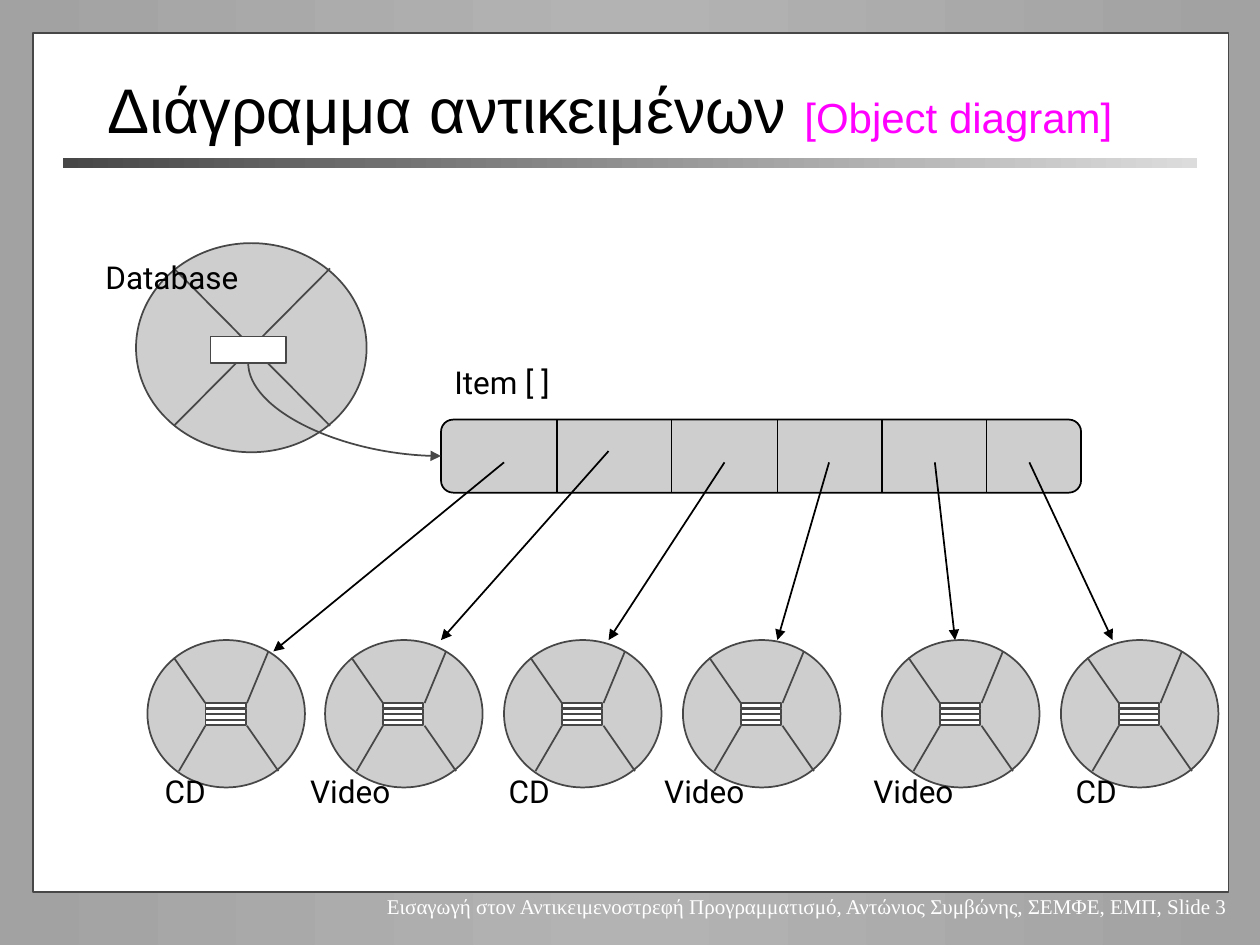
from copy import deepcopy
from dataclasses import dataclass

from lxml.etree import SubElement
from pptx import Presentation
from pptx.dml.color import RGBColor
from pptx.enum.shapes import MSO_CONNECTOR, MSO_SHAPE
from pptx.enum.text import MSO_ANCHOR, MSO_AUTO_SIZE, PP_ALIGN
from pptx.oxml.ns import qn
from pptx.util import Inches, Pt


@dataclass(frozen=True)
class Theme:
    black: str = "000000"
    white: str = "FFFFFF"
    dark: str = "474747"
    light: str = "CECECE"
    accent: str = "FF00FF"
    backdrop: tuple = ("A2A2A2", "B3B3B3", "A2A2A2")
    rule: tuple = ("474747", "DCDCDC")
    title_font: str = "Arial"
    label_font: str = "Roboto"
    footer_font: str = "Times New Roman"
    title_size: int = 36
    subtitle_size: int = 24
    label_size: int = 18
    footer_size: int = 12
    line_width: int = 1


class Deck:
    def __init__(self, theme):
        self.theme = theme
        self.prs = Presentation()
        self.prs.slide_width, self.prs.slide_height = Inches(10), Inches(7.5)
        self.s = self.prs.slides.add_slide(self.prs.slide_layouts[5])

    def gradient(self, owner, fill, colors):
        fill.gradient()
        fill.gradient_angle = 0
        stops = owner.element.find(".//" + qn("a:gsLst"))
        for _ in colors[2:]:
            stops.append(deepcopy(stops[-1]))
        for i, (stop, color) in enumerate(zip(fill.gradient_stops, colors)):
            stop.position = i / (len(colors) - 1)
            stop.color.rgb = RGBColor.from_string(color)

    def background(self):
        self.gradient(self.s, self.s.background.fill, self.theme.backdrop)

    def group(self):
        return self.s.shapes.add_group_shape()

    def shape(self, kind, box, fill, line=None, parent=None):
        sp = (parent or self.s).shapes.add_shape(kind, *map(Inches, box))
        sp.shadow.inherit = False
        if isinstance(fill, tuple):
            self.gradient(sp, sp.fill, fill)
        else:
            sp.fill.solid()
            sp.fill.fore_color.rgb = RGBColor.from_string(fill)
        if line:
            sp.line.color.rgb = RGBColor.from_string(line)
            sp.line.width = Pt(self.theme.line_width)
        else:
            sp.line.fill.background()
        return sp

    def line(self, start, end, color, parent=None, arrow=False, kind=MSO_CONNECTOR.STRAIGHT):
        c = (parent or self.s).shapes.add_connector(kind, *map(Inches, (*start, *end)))
        c.line.color.rgb = RGBColor.from_string(color)
        c.line.width = Pt(self.theme.line_width)
        props = c.element.spPr
        if arrow:
            SubElement(props.find(qn("a:ln")), qn("a:tailEnd"), type="triangle")
        SubElement(props, qn("a:effectLst"))
        return c

    def quarter_curve(self, start, end, color):
        mid_x, mid_y = (start[0] + end[0]) / 2, (start[1] + end[1]) / 2
        half_w, half_h = (end[1] - start[1]) / 2, (end[0] - start[0]) / 2
        c = self.line((mid_x + half_w, mid_y - half_h), (mid_x - half_w, mid_y + half_h),
                      color, arrow=True, kind=MSO_CONNECTOR.CURVE)
        props = c.element.spPr
        props.find(qn("a:prstGeom")).set("prst", "curvedConnector2")
        props.find(qn("a:xfrm")).set("rot", str(270 * 60000))

    def run(self, p, text, font, size, color):
        r = p.add_run()
        r.text = text
        r.font.name, r.font.size = font, Pt(size)
        r.font.color.rgb = RGBColor.from_string(color)

    def title(self, box, text, subtitle):
        t = self.theme
        sp = self.s.shapes.title
        sp.left, sp.top, sp.width, sp.height = map(Inches, box)
        tf = sp.text_frame
        tf.auto_size = MSO_AUTO_SIZE.NONE
        tf.vertical_anchor = MSO_ANCHOR.MIDDLE
        p = tf.paragraphs[0]
        p.alignment = PP_ALIGN.LEFT
        self.run(p, text, t.title_font, t.title_size, t.black)
        self.run(p, subtitle, t.title_font, t.subtitle_size, t.accent)

    def text(self, box, text, font, size, color, align, anchor):
        tf = self.s.shapes.add_textbox(*map(Inches, box)).text_frame
        tf.word_wrap = False
        tf.auto_size = MSO_AUTO_SIZE.SHAPE_TO_FIT_TEXT
        tf.vertical_anchor = anchor
        p = tf.paragraphs[0]
        p.alignment = align
        self.run(p, text, font, size, color)

    def label(self, x, y, width, text):
        t = self.theme
        self.text((x, y, width, 0.4), text, t.label_font, t.label_size, t.black,
                  PP_ALIGN.CENTER, MSO_ANCHOR.MIDDLE)

    def footer(self, box, text):
        t = self.theme
        self.text(box, text, t.footer_font, t.footer_size, t.white,
                  PP_ALIGN.RIGHT, MSO_ANCHOR.TOP)

    def array(self, box, dividers):
        t = self.theme
        group = self.group()
        self.shape(MSO_SHAPE.FLOWCHART_ALTERNATE_PROCESS, box, t.light, t.black, group)
        for x in dividers:
            self.line((x, box[1]), (x, box[1] + box[3]), t.black, group)

    def item(self, x, y):
        t = self.theme
        group = self.group()
        self.shape(MSO_SHAPE.OVAL, (x, y, 1.25, 1.17), t.light, t.dark, group)
        for i in range(4):
            self.shape(MSO_SHAPE.RECTANGLE, (x + 0.46, y + 0.5 + i * 0.045, 0.32, 0.04),
                       t.white, t.dark, group)
        for x1, y1, x2, y2 in ((0.21, 0.14, 0.46, 0.5), (0.46, 0.68, 0.25, 1.04),
                               (0.79, 0.68, 1.04, 1.04), (0.79, 0.5, 0.96, 0.09)):
            self.line((x + x1, y + y1), (x + x2, y + y2), t.dark, group)

    def database(self):
        t = self.theme
        self.shape(MSO_SHAPE.OVAL, (1.08, 1.93, 1.83, 1.66), t.light, t.dark)
        self.line((1.38, 2.13), (2.62, 3.38), t.dark)
        self.line((1.38, 3.38), (2.62, 2.13), t.dark)
        self.shape(MSO_SHAPE.RECTANGLE, (1.67, 2.67, 0.6, 0.21), t.white, t.dark)


def main():
    t = Theme()
    d = Deck(t)
    d.background()
    d.shape(MSO_SHAPE.RECTANGLE, (0.26, 0.26, 9.49, 6.82), t.white, t.dark)
    d.shape(MSO_SHAPE.RECTANGLE, (0.5, 1.25, 9, 0.08), t.rule)
    d.footer((2.79, 7.04, 7.05, 0.3),
             "Εισαγωγή στον Αντικειμενοστρεφή Προγραμματισμό, "
             "Αντώνιος Συμβώνης, ΣΕΜΦΕ, ΕΜΠ, Slide 3")
    title = d.s.shapes.title.element
    title.getparent().append(title)
    d.title((0.75, 0.55, 8.67, 0.62), "Διάγραμμα αντικειμένων ", "[Object diagram]")

    d.array((3.5, 3.33, 5.08, 0.58), (4.42, 5.33, 6.17, 7, 7.83))
    d.database()
    d.quarter_curve((1.97, 2.88), (3.5, 3.62), t.dark)
    d.label(0.73, 2, 1.27, "Database")
    d.label(3.5, 2.83, 0.97, "Item [ ]")

    label_widths = {"CD": 0.56, "Video": 0.84}
    items = (
        (1.17, "CD", 1.19, (4, 3.67), (2.17, 5.17)),
        (2.58, "Video", 2.36, (4.83, 3.58), (3.5, 5.08)),
        (4, "CD", 3.92, (5.75, 3.67), (4.83, 5.08)),
        (5.42, "Video", 5.17, (6.58, 3.67), (6.17, 5.08)),
        (7, "Video", 6.83, (7.42, 3.67), (7.58, 5.08)),
        (8.42, "CD", 8.42, (8.17, 3.67), (8.83, 5.08)),
    )
    for x, name, label_x, start, end in items:
        d.item(x, 5.08)
        d.line(start, end, t.black, arrow=True)
        d.label(label_x, 6.08, label_widths[name], name)
    d.prs.save("out.pptx")


if __name__ == "__main__":
    main()
